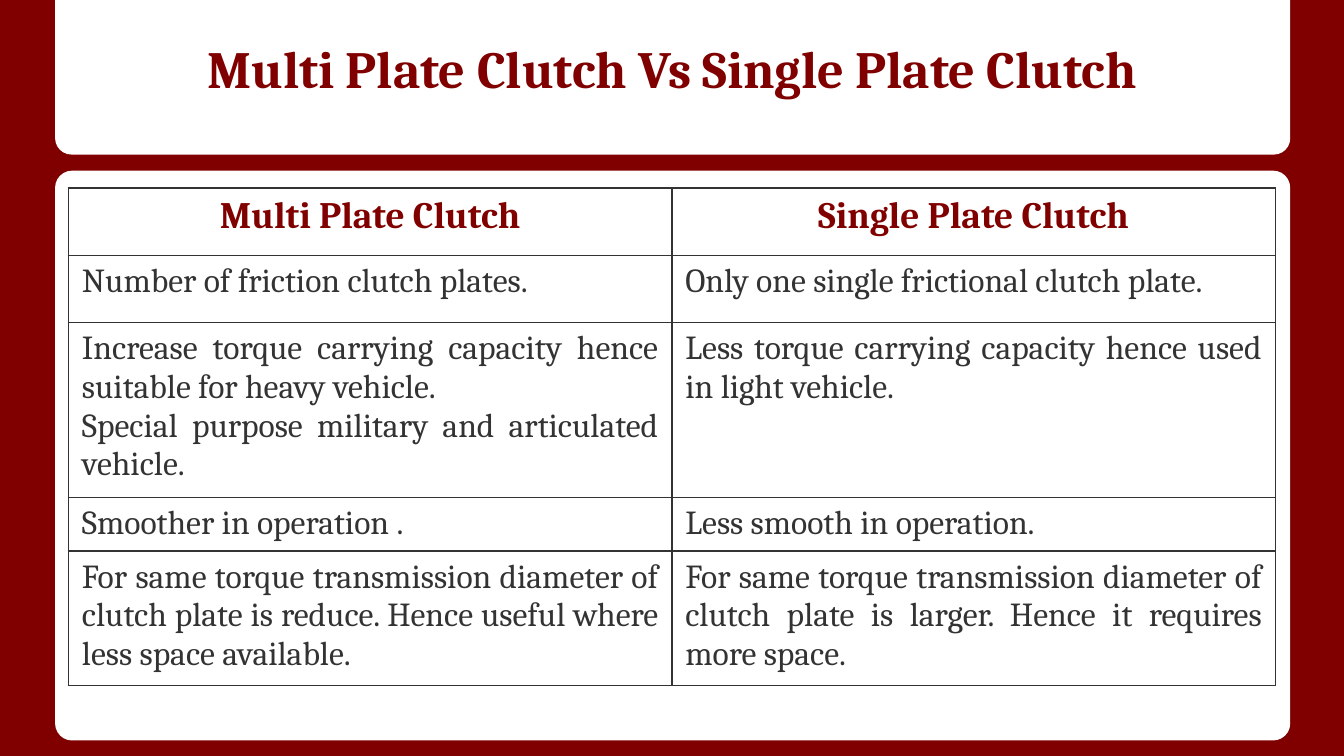
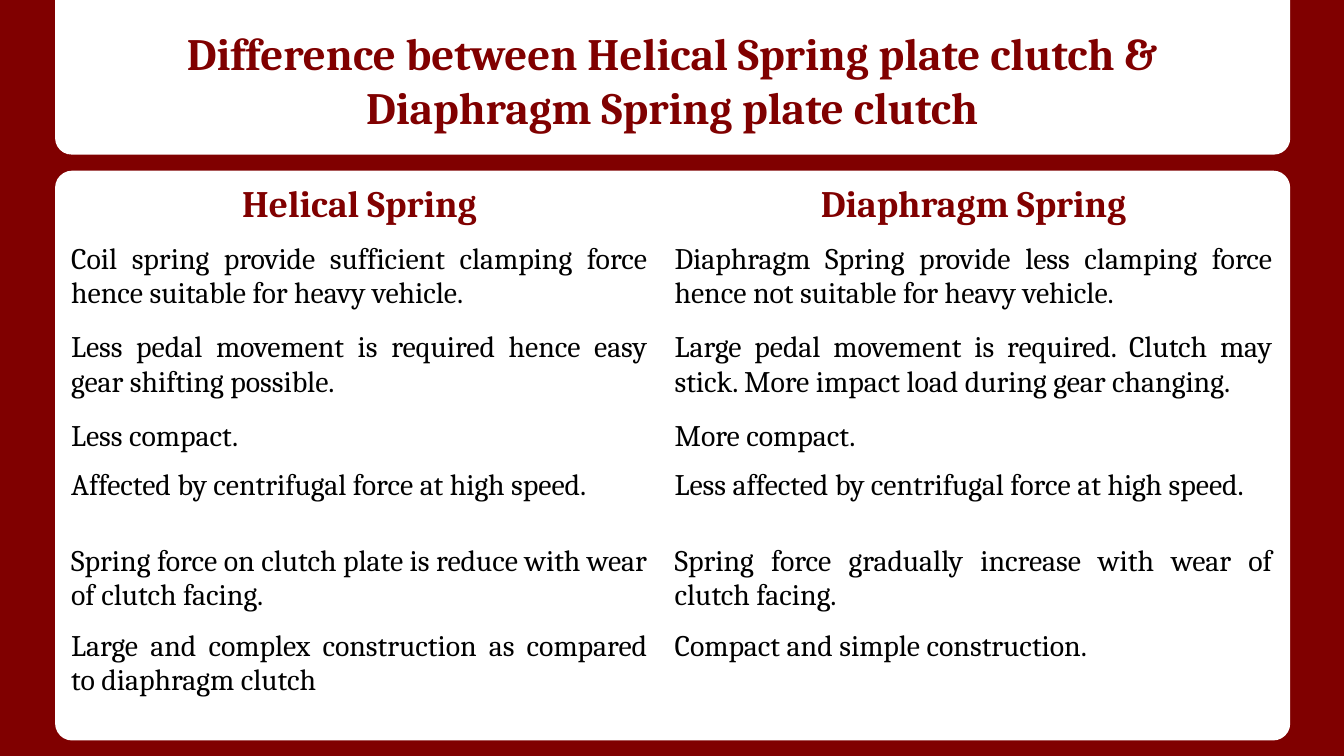
from dataclasses import dataclass
from typing import Any

from lxml.etree import SubElement
from pptx import Presentation
from pptx.dml.color import RGBColor
from pptx.enum.shapes import MSO_SHAPE
from pptx.enum.text import MSO_ANCHOR, PP_ALIGN
from pptx.oxml.ns import qn
from pptx.slide import Slide
from pptx.util import Emu, Pt

SCALE = 4572
MAROON = RGBColor(0x80, 0x00, 0x00)
WHITE = RGBColor(0xFF, 0xFF, 0xFF)
BLACK = RGBColor(0x00, 0x00, 0x00)
GREY = RGBColor(0x33, 0x33, 0x33)
FONT = "Cambria"
PLAIN = "{2D5ABB26-0587-4C30-8999-92F81FD0307C}"


@dataclass(frozen=True)
class Box:
    left: int
    top: int
    width: int
    height: int

    def spans(self) -> tuple[Emu, ...]:
        return tuple(map(px, (self.left, self.top, self.width, self.height)))


@dataclass(frozen=True)
class Panel:
    kind: MSO_SHAPE
    box: Box
    curves: tuple[float, ...]
    turn: int


@dataclass(frozen=True)
class Grid:
    left: int
    top: int
    widths: tuple[int, ...]
    heights: tuple[int, ...]
    size: int
    ink: RGBColor
    lined: bool
    rows: tuple[tuple[str, str], ...]


@dataclass(frozen=True)
class Page:
    title: str
    size: int
    height: int
    grid: Grid


PANELS = (
    Panel(MSO_SHAPE.ROUNDED_RECTANGLE, Box(82, 254, 1838, 848), (0.03,), 0),
    Panel(MSO_SHAPE.ROUND_2_SAME_RECTANGLE, Box(82, 0, 1838, 230), (0.106, 0), 180),
)

PAGES = (
    Page("Multi Plate Clutch Vs Single Plate Clutch", 28, 138, Grid(
        102, 280, (898, 898), (100, 100, 100, 76, 100), 18, GREY, True, (
            ("Multi Plate Clutch", "Single Plate Clutch"),
            ("Number of friction clutch plates.",
             "Only one single frictional clutch plate."),
            ("Increase torque carrying capacity hence suitable for heavy vehicle.\n"
             "Special purpose military and articulated vehicle.",
             "Less torque carrying capacity hence used in light vehicle."),
            ("Smoother in operation .", "Less smooth in operation."),
            ("For same torque transmission diameter of clutch plate is reduce. "
             "Hence useful where less space available.",
             "For same torque transmission diameter of clutch plate is larger. "
             "Hence it requires more space."),
        ))),
    Page("Difference between Helical Spring plate clutch & "
         "Diaphragm Spring plate clutch", 24, 188, Grid(
        86, 264, (898, 930), (78, 132, 132, 58, 112, 112, 112), 16, BLACK, False, (
            ("Helical Spring", "Diaphragm Spring"),
            ("Coil spring provide sufficient clamping force hence suitable "
             "for heavy vehicle.",
             "Diaphragm Spring provide less clamping force hence not suitable "
             "for heavy vehicle."),
            ("Less pedal movement is required hence easy gear shifting possible.",
             "Large pedal movement is required. Clutch may stick. "
             "More impact load during gear changing."),
            ("Less compact.", "More compact."),
            ("Affected by centrifugal force at high speed.",
             "Less affected by centrifugal force at high speed."),
            ("Spring force on clutch plate is reduce with wear of clutch facing.",
             "Spring force gradually increase with wear of clutch facing."),
            ("Large and complex construction as compared to diaphragm clutch",
             "Compact and simple construction."),
        ))),
)


def px(count: int) -> Emu:
    return Emu(count * SCALE)


def apply(target: Any, values: dict[str, Any]) -> None:
    for name, value in values.items():
        setattr(target, name, value)


def write(frame: Any, text: str, size: int, ink: RGBColor, head: bool) -> None:
    frame.text = text
    for para in frame.paragraphs:
        para.alignment = PP_ALIGN.CENTER if head else PP_ALIGN.JUSTIFY
        for run in para.runs:
            apply(run.font, {"name": FONT, "size": Pt(size), "bold": head})
            run.font.color.rgb = ink


def draw_panel(slide: Slide, panel: Panel) -> None:
    shape = slide.shapes.add_shape(panel.kind, *panel.box.spans())
    for index, curve in enumerate(panel.curves):
        shape.adjustments[index] = curve
    shape.rotation = panel.turn
    shape.shadow.inherit = False
    shape.fill.solid()
    shape.fill.fore_color.rgb = WHITE
    shape.line.fill.background()


def draw_title(slide: Slide, page: Page) -> None:
    box = Box(100, 30, 1800, page.height)
    frame = slide.shapes.add_textbox(*box.spans()).text_frame
    sides = ("margin_left", "margin_top", "margin_right", "margin_bottom")
    apply(frame, {"word_wrap": True, "vertical_anchor": MSO_ANCHOR.BOTTOM,
                  **dict.fromkeys(sides, px(20))})
    write(frame, page.title, page.size, MAROON, True)


def edge(cell: Any) -> None:
    props = cell._tc.get_or_add_tcPr()
    for index, side in enumerate(("lnL", "lnR", "lnT", "lnB")):
        line = SubElement(props, qn(f"a:{side}"), w=str(Pt(1)))
        fill = SubElement(line, qn("a:solidFill"))
        SubElement(fill, qn("a:srgbClr"), val=str(GREY))
        props.remove(line)
        props.insert(index, line)


def draw_grid(slide: Slide, grid: Grid) -> None:
    box = Box(grid.left, grid.top, sum(grid.widths), sum(grid.heights))
    shape = slide.shapes.add_table(len(grid.rows), len(grid.widths), *box.spans())
    table = shape.table
    apply(table, {"first_row": False, "horz_banding": False})
    for style in shape.element.iter(qn("a:tableStyleId")):
        style.text = PLAIN
    for column, width in zip(table.columns, grid.widths):
        column.width = px(width)
    for row, height in zip(table.rows, grid.heights):
        row.height = px(height)
    for down, texts in enumerate(grid.rows):
        head = down == 0
        for across, text in enumerate(texts):
            cell = table.cell(down, across)
            cell.fill.background()
            write(cell.text_frame, text, 20 if head else grid.size,
                  MAROON if head else grid.ink, head)
            if grid.lined:
                edge(cell)


def main() -> None:
    deck = Presentation()
    apply(deck, {"slide_width": px(2000), "slide_height": px(1125)})
    for page in PAGES:
        slide = deck.slides.add_slide(deck.slide_layouts[6])
        slide.background.fill.solid()
        slide.background.fill.fore_color.rgb = MAROON
        for panel in PANELS:
            draw_panel(slide, panel)
        draw_title(slide, page)
        draw_grid(slide, page.grid)
    deck.save("out.pptx")


if __name__ == "__main__":
    main()
